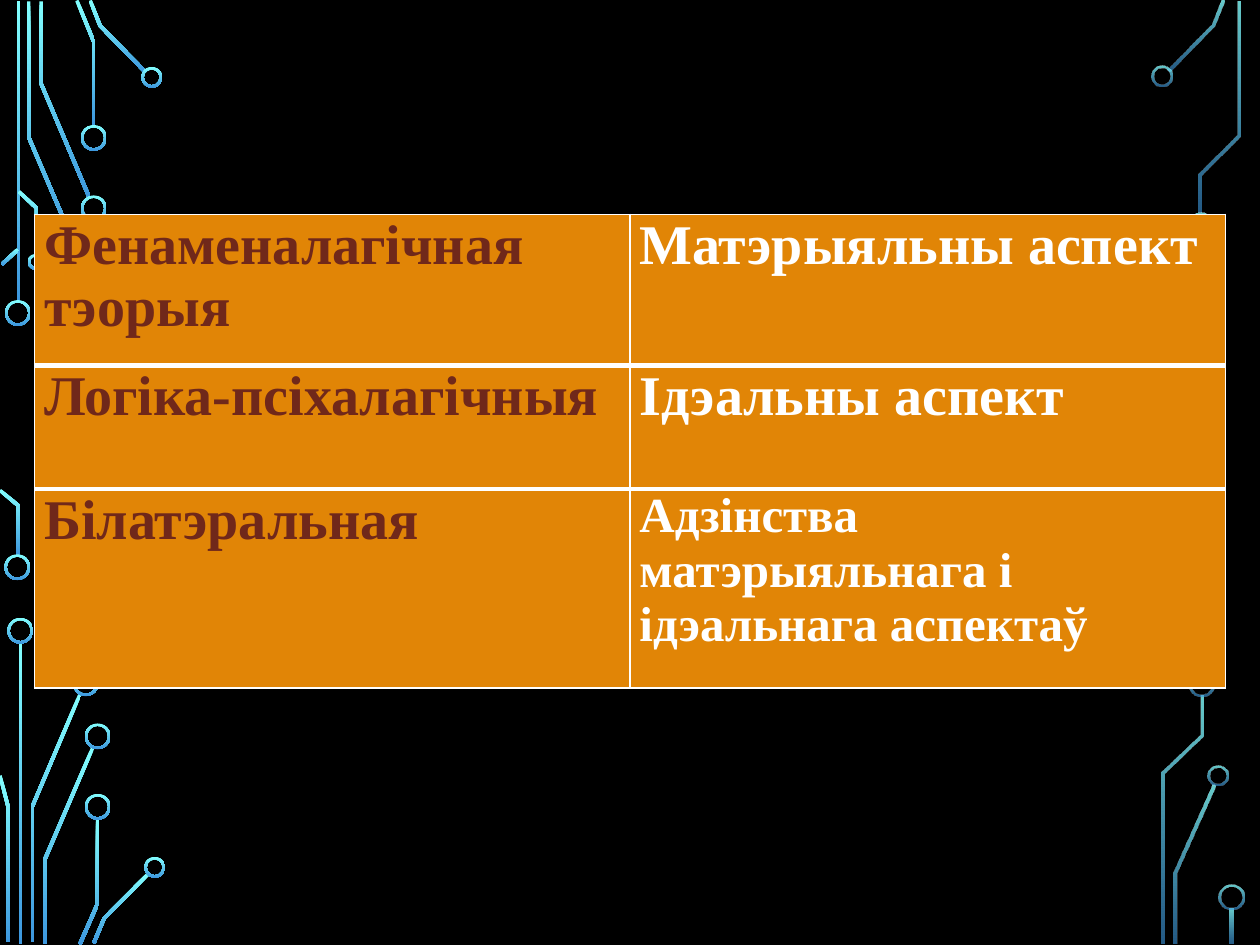
from dataclasses import dataclass
from math import hypot

from lxml.etree import SubElement
from pptx import Presentation
from pptx.dml.color import RGBColor
from pptx.enum.shapes import MSO_SHAPE
from pptx.oxml.ns import qn
from pptx.util import Cm, Pt


@dataclass(frozen=True)
class Theme:
    """Colours, type sizes and stroke widths of the slide."""
    background: str = "000000"
    glow: tuple = ("82FFFF", "3D97DE")
    cell: str = "E18506"
    border: str = "FFFFFF"
    theory: str = "70281A"
    aspect: str = "FFFFFF"
    font: str = "Times New Roman"
    large: int = 32
    small: int = 28
    thin: int = 1
    thick: int = 3
    trace: float = 0.07
    ring: float = 0.05


THEME = Theme()
SOLID, FADED = (100, 100), (80, 60)
BIG, SMALL = 0.52, 0.42

TOP_LEFT = {
    "bars": [(0.37, 0.03, 6.1)],
    "traces": [
        [(0.58, 0.03), (0.58, 2.77), (1.55, 5.04)],
        [(0.83, 0.03), (0.83, 1.69), (1.8, 3.98)],
        [(1.55, 0.01), (1.89, 0.84), (1.89, 2.54)],
        [(1.82, 0.01), (2.02, 0.52), (2.93, 1.45)],
        [(0.04, 5.33), (0.36, 5.03)],
        [(0.38, 3.86), (0.74, 4.2), (0.74, 5.16)],
    ],
    "rings": [(0.36, 6.31, BIG), (1.66, 5.27, BIG), (1.89, 4.2, BIG),
              (1.89, 2.78, BIG), (3.06, 1.56, SMALL), (0.72, 5.28, 0.32)],
}
BOTTOM_LEFT = {
    "bars": [(0.42, 3.43, 9.5)],
    "traces": [
        [(0, 0.36), (0.36, 0.66), (0.36, 1.68)],
        [(0.65, 9.47), (0.65, 6.74), (1.61, 4.48)],
        [(0.17, 9.47), (0.17, 6.76), (0, 6.11)],
        [(0.9, 9.5), (0.9, 7.81), (1.87, 5.55)],
        [(1.61, 9.51), (1.97, 8.69), (1.97, 6.99)],
        [(1.89, 9.49), (2.1, 8.99), (3, 8.08)],
    ],
    "rings": [(0.35, 1.91, BIG), (0.41, 3.19, BIG), (1.73, 4.25, BIG),
              (1.97, 5.32, BIG), (1.97, 6.74, BIG), (3.12, 7.96, SMALL)],
}
TOP_RIGHT = {
    "bars": [],
    "traces": [
        [(0.71, 1.41), (1.6, 0.51), (1.8, 0.01)],
        [(1.33, 4.29), (1.33, 3.52), (2.12, 2.73), (2.12, 0.03)],
    ],
    "rings": [(0.57, 1.54, SMALL), (1.35, 4.54, BIG)],
}
BOTTOM_RIGHT = {
    "bars": [(1.97, 8.79, 9.5)],
    "traces": [
        [(0.84, 9.5), (0.84, 8.08), (1.6, 6.31)],
        [(0.6, 9.5), (0.6, 6.06), (1.37, 5.3), (1.37, 4.5)],
    ],
    "rings": [(1.7, 6.11, SMALL), (1.36, 4.25, BIG), (1.96, 8.56, BIG)],
}
ROWS = [
    ("Фенаменалагічная тэорыя", "Матэрыяльны аспект", THEME.large, 3.05),
    ("Логіка-псіхалагічныя", "Ідэальны аспект", THEME.large, 2.49),
    ("Білатэральная", "Адзінства матэрыяльнага і ідэальнага аспектаў", THEME.small, 4.01),
]


def rgb(color):
    """Return the colour object of a hex string."""
    return RGBColor.from_string(color)


def paint_glow(sp, opacity):
    """Fill a shape with the vertical glow and drop its line and shadow."""
    sp.shadow.inherit = False
    sp.line.fill.background()
    sp.fill.gradient()
    sp.fill.gradient_angle = 270
    for stop, color, position, percent in zip(sp.fill.gradient_stops, THEME.glow, (0, 1), opacity):
        stop.color.rgb = rgb(color)
        stop.position = position
    for clr, percent in zip(sp._element.iter(qn("a:srgbClr")), opacity):
        if percent < 100:
            SubElement(clr, qn("a:alpha")).set("val", str(percent * 1000))


def trace_outline(points, width):
    """Return the mitred outline of a polyline of the given width."""
    normals = []
    for (x1, y1), (x2, y2) in zip(points, points[1:]):
        length = hypot(x2 - x1, y2 - y1)
        normals.append(((y1 - y2) / length, (x2 - x1) / length))
    left, right = [], []
    for (x, y), (ax, ay), (bx, by) in zip(points, normals[:1] + normals, normals + normals[-1:]):
        k = width / 2 / (1 + ax * bx + ay * by)
        dx, dy = k * (ax + bx), k * (ay + by)
        left.append((x + dx, y + dy))
        right.append((x - dx, y - dy))
    return left + right[::-1]


def add_circuit(slide, x, y, parts, opacity):
    """Draw one corner of circuit bars, traces and rings from the origin x, y."""
    shapes = slide.shapes
    drawn = []
    for cx, top, bottom in parts["bars"]:
        drawn.append(shapes.add_shape(
            MSO_SHAPE.RECTANGLE, Cm(x + cx - THEME.trace / 2), Cm(y + top),
            Cm(THEME.trace), Cm(bottom - top)))
    for points in parts["traces"]:
        outline = [(Cm(x + px), Cm(y + py)) for px, py in trace_outline(points, THEME.trace)]
        builder = shapes.build_freeform(*outline[0])
        builder.add_line_segments(outline[1:], close=True)
        drawn.append(builder.convert_to_shape())
    for cx, cy, size in parts["rings"]:
        sp = shapes.add_shape(MSO_SHAPE.DONUT, Cm(x + cx - size / 2), Cm(y + cy - size / 2),
                              Cm(size), Cm(size))
        sp.adjustments[0] = THEME.ring / size
        drawn.append(sp)
    for sp in drawn:
        paint_glow(sp, opacity)


def set_borders(cell, top, bottom):
    """Give a cell thin sides and the given top and bottom widths."""
    tc_pr = cell._tc.get_or_add_tcPr()
    widths = {"a:lnL": THEME.thin, "a:lnR": THEME.thin, "a:lnT": top, "a:lnB": bottom}
    for i, (tag, width) in enumerate(widths.items()):
        ln = tc_pr.makeelement(qn(tag), {"w": str(Pt(width))})
        fill = SubElement(ln, qn("a:solidFill"))
        SubElement(fill, qn("a:srgbClr")).set("val", THEME.border)
        tc_pr.insert(i, ln)


def add_theory_table(slide, x, y, width):
    """Place the table of theories and aspects in the given box."""
    height = sum(row[-1] for row in ROWS)
    table = slide.shapes.add_table(len(ROWS), 2, Cm(x), Cm(y), Cm(width), Cm(height)).table
    table.first_row = table.horz_banding = False
    last = len(ROWS) - 1
    for i, (theory, aspect, aspect_size, row_height) in enumerate(ROWS):
        table.rows[i].height = Cm(row_height)
        columns = [(theory, THEME.theory, THEME.large), (aspect, THEME.aspect, aspect_size)]
        for j, (text, color, size) in enumerate(columns):
            cell = table.cell(i, j)
            cell.margin_left = cell.margin_right = Cm(0.19)
            cell.margin_top = cell.margin_bottom = 0
            cell.fill.solid()
            cell.fill.fore_color.rgb = rgb(THEME.cell)
            cell.text_frame.text = text
            font = cell.text_frame.paragraphs[0].runs[0].font
            font.name, font.size, font.bold = THEME.font, Pt(size), True
            font.color.rgb = rgb(color)
            set_borders(cell, THEME.thick if i else THEME.thin,
                        THEME.thick if i < last else THEME.thin)


def main():
    """Build the slide and save it."""
    prs = Presentation()
    prs.slide_width, prs.slide_height = Cm(25.4), Cm(19.05)
    slide = prs.slides.add_slide(prs.slide_layouts[6])
    slide.background.fill.solid()
    slide.background.fill.fore_color.rgb = rgb(THEME.background)
    right, middle = 22.86, 9.525
    add_circuit(slide, 0, 0, TOP_LEFT, SOLID)
    add_circuit(slide, 0, middle, BOTTOM_LEFT, SOLID)
    add_circuit(slide, right, 0, TOP_RIGHT, FADED)
    add_circuit(slide, right, middle, BOTTOM_RIGHT, FADED)
    add_theory_table(slide, 0.7, 4.32, 24)
    prs.save("out.pptx")


if __name__ == "__main__":
    main()
